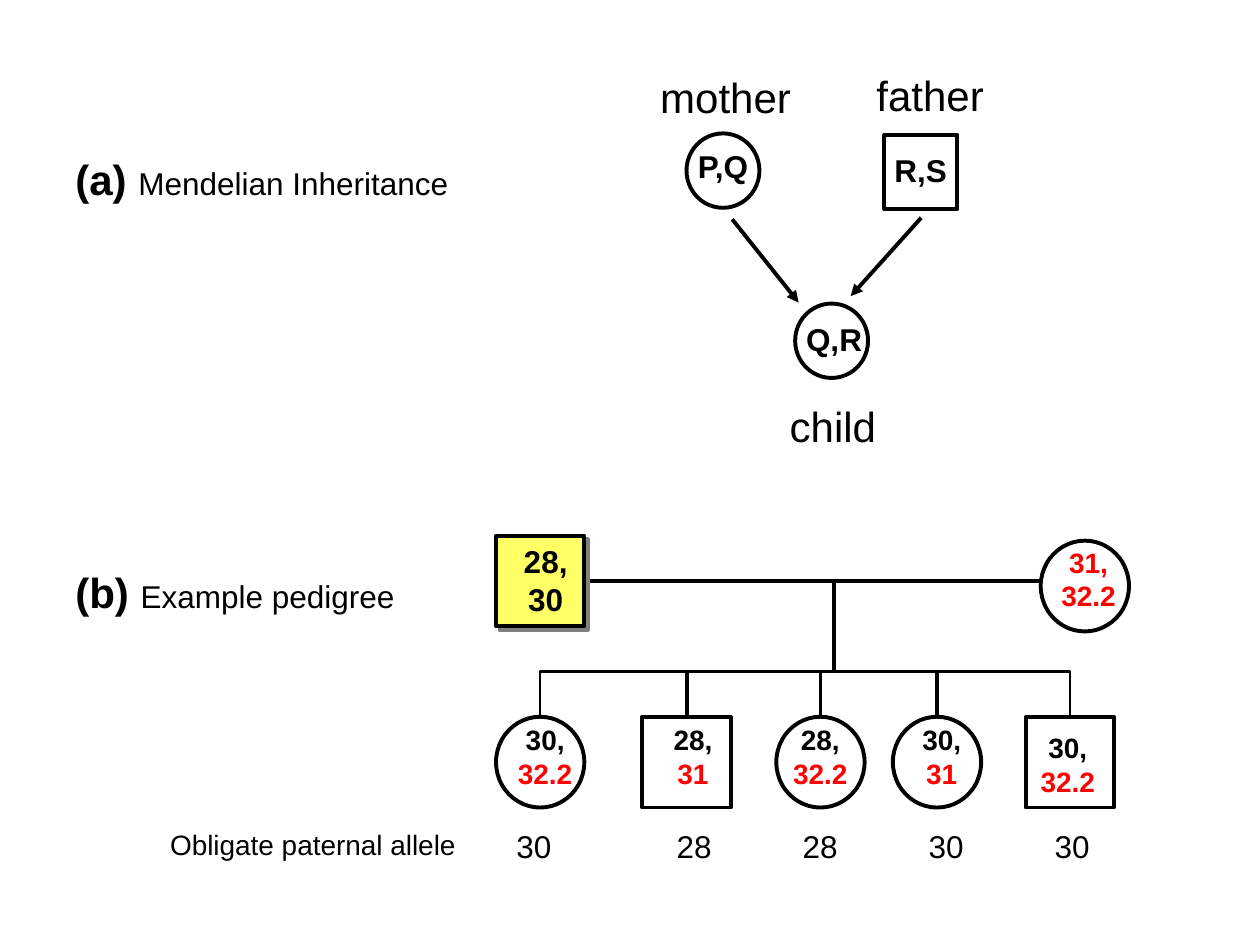
from lxml.etree import SubElement
from pptx import Presentation
from pptx.dml.color import RGBColor
from pptx.enum.dml import MSO_LINE
from pptx.enum.shapes import MSO_CONNECTOR, MSO_SHAPE
from pptx.enum.text import MSO_ANCHOR, MSO_AUTO_SIZE, PP_ALIGN
from pptx.oxml.ns import qn
from pptx.util import Cm, Pt

THEME = {
    "font": "Arial", "ink": "000000", "paternal": "FFFF66", "maternal": "FF0000", "shadow": "808080",
    "title": 24, "body": 18, "small": 16, "line": 2.25, "thin": 1.5,
}
INK, RED = THEME["ink"], THEME["maternal"]
FEMALE, MALE = MSO_SHAPE.OVAL, MSO_SHAPE.RECTANGLE

HEADINGS = [("(a) ", "Mendelian Inheritance", 2.97, 8.1), ("(b) ", "Example pedigree", 11.3, 7.01)]

# symbol, its left and top; genotype and its box; role and its box
TRIO = [
    (FEMALE, 13.84, 2.69, "P,Q", (13.82, 2.84, 1.78, 1.22), "mother", (13.06, 1.32, 3.66, 1.5)),
    (MALE, 17.83, 2.72, "R,S", (17.78, 2.92, 1.83, 1.22), "father", (17.42, 1.27, 3.1, 1.5)),
    (FEMALE, 16.03, 6.12, "Q,R", (16.0, 6.32, 1.9, 1.22), "child", (15.67, 7.95, 2.62, 1.5)),
]
TRIO_SIZE = (1.47, 1.5)
ARROWS = [(14.76, 4.42, 16.1, 6.1), (18.57, 4.39, 17.15, 5.97)]

# symbol, its left; paternal and maternal allele; text left, top, width; allele label left
CHILDREN = [
    (FEMALE, 10.0, "30", "32.2", (9.96, 14.45, 2.06), 10.16),
    (MALE, 12.95, "28", "31", (13.13, 14.45, 1.68), 13.39),
    (FEMALE, 15.65, "28", "32.2", (15.52, 14.45, 2.03), 15.93),
    (FEMALE, 18.0, "30", "31", (18.21, 14.45, 1.55), 18.47),
    (MALE, 20.68, "30", "32.2", (20.6, 14.61, 1.85), 21.01),
]
PEDIGREE_SIZE = (1.78, 1.83)
CHILD_TOP, SIBLING_Y, MATING_Y, DESCENT_X = 14.45, 13.54, 11.71, 16.81


def rgb(value):
    return RGBColor.from_string(value)


def add_text(shapes, runs, box, size=THEME["body"], bold=False, color=INK, align=PP_ALIGN.LEFT, wrap=False):
    """Add a text box; runs is a string or a list of (text, overrides)."""
    tf = shapes.add_textbox(*map(Cm, box)).text_frame
    tf.word_wrap = wrap
    tf.auto_size = MSO_AUTO_SIZE.SHAPE_TO_FIT_TEXT
    tf.vertical_anchor = MSO_ANCHOR.TOP
    p = tf.paragraphs[0]
    p.alignment = align
    for text, own in [(runs, {})] if isinstance(runs, str) else runs:
        r = p.add_run()
        r.text = text
        r.font.name = THEME["font"]
        r.font.size = Pt(own.get("size", size))
        r.font.bold = own.get("bold", bold)
        r.font.color.rgb = rgb(own.get("color", color))


def style_line(line, width=THEME["line"]):
    line.color.rgb = rgb(INK)
    line.width = Pt(width)
    line.dash_style = MSO_LINE.SOLID


def add_symbol(shapes, kind, left, top, size, fill=None):
    sp = shapes.add_shape(kind, *map(Cm, (left, top, *size)))
    sp.shadow.inherit = False
    if fill:
        sp.fill.solid()
        sp.fill.fore_color.rgb = rgb(fill)
    else:
        sp.fill.background()
    style_line(sp.line)
    return sp


def add_line(shapes, x1, y1, x2, y2, arrow=False):
    line = shapes.add_connector(MSO_CONNECTOR.STRAIGHT, *map(Cm, (x1, y1, x2, y2)))
    style_line(line.line)
    props = line._element.spPr
    if arrow:
        SubElement(props.find(qn("a:ln")), qn("a:tailEnd"), type="triangle")
    SubElement(props, qn("a:effectLst"))


def add_hard_shadow(sp):
    effects = sp._element.spPr.find(qn("a:effectLst"))
    shadow = SubElement(effects, qn("a:outerShdw"), dist=str(Pt(2.8)), dir="2700000", algn="ctr")
    SubElement(shadow, qn("a:srgbClr"), val=THEME["shadow"])


def draw_inheritance(shapes):
    for kind, left, top, genotype, genotype_box, role, role_box in TRIO:
        add_symbol(shapes, kind, left, top, TRIO_SIZE)
        add_text(shapes, genotype, genotype_box, bold=True)
        add_text(shapes, role, role_box, size=THEME["title"])
    for ends in ARROWS:
        add_line(shapes, *ends, arrow=True)


def draw_parents(shapes):
    add_line(shapes, 11.79, MATING_Y, 21.03, MATING_Y)
    add_line(shapes, DESCENT_X, MATING_Y, DESCENT_X, SIBLING_Y)
    add_hard_shadow(add_symbol(shapes, MALE, 10.0, 10.8, PEDIGREE_SIZE, fill=THEME["paternal"]))
    add_symbol(shapes, FEMALE, 20.98, 10.9, PEDIGREE_SIZE)
    centred = {"bold": True, "align": PP_ALIGN.CENTER, "wrap": True}
    add_text(shapes, "28, 30", (10.16, 10.8, 1.68, 1.8), **centred)
    add_text(shapes, "31, 32.2", (21.03, 10.87, 1.83, 1.63), size=THEME["small"], color=RED, **centred)


def draw_children(shapes):
    centres = [child[1] + PEDIGREE_SIZE[0] / 2 for child in CHILDREN]
    first, *inner, last = centres
    bracket = shapes.build_freeform(Cm(first), Cm(CHILD_TOP))
    bracket.add_line_segments(
        [(Cm(first), Cm(SIBLING_Y)), (Cm(last), Cm(SIBLING_Y)), (Cm(last), Cm(CHILD_TOP))], close=False)
    sp = bracket.convert_to_shape()
    sp.shadow.inherit = False
    sp.fill.background()
    style_line(sp.line, THEME["thin"])
    for x in inner:
        add_line(shapes, x, SIBLING_Y, x, CHILD_TOP)

    for kind, left, paternal, maternal, (x, y, width), label_left in CHILDREN:
        add_symbol(shapes, kind, left, CHILD_TOP, PEDIGREE_SIZE)
        add_text(shapes, [(f"{paternal}, ", {}), (maternal, {"color": RED})], (x, y, width, 1.63),
                 size=THEME["small"], bold=True, align=PP_ALIGN.CENTER, wrap=True)
        add_text(shapes, paternal, (label_left, 16.54, 1.22, 1.02))
    add_text(shapes, "Obligate paternal allele", (3.18, 16.56, 6.27, 0.94), size=THEME["small"])


def main():
    prs = Presentation()
    prs.slide_width, prs.slide_height = Cm(25.4), Cm(19.05)
    shapes = prs.slides.add_slide(prs.slide_layouts[6]).shapes
    for letter, title, top, width in HEADINGS:
        add_text(shapes, [(letter, {"size": THEME["title"], "bold": True}), (title, {})],
                 (1.27, top, width, 1.27))
    draw_inheritance(shapes)
    draw_parents(shapes)
    draw_children(shapes)
    prs.save("out.pptx")


if __name__ == "__main__":
    main()
